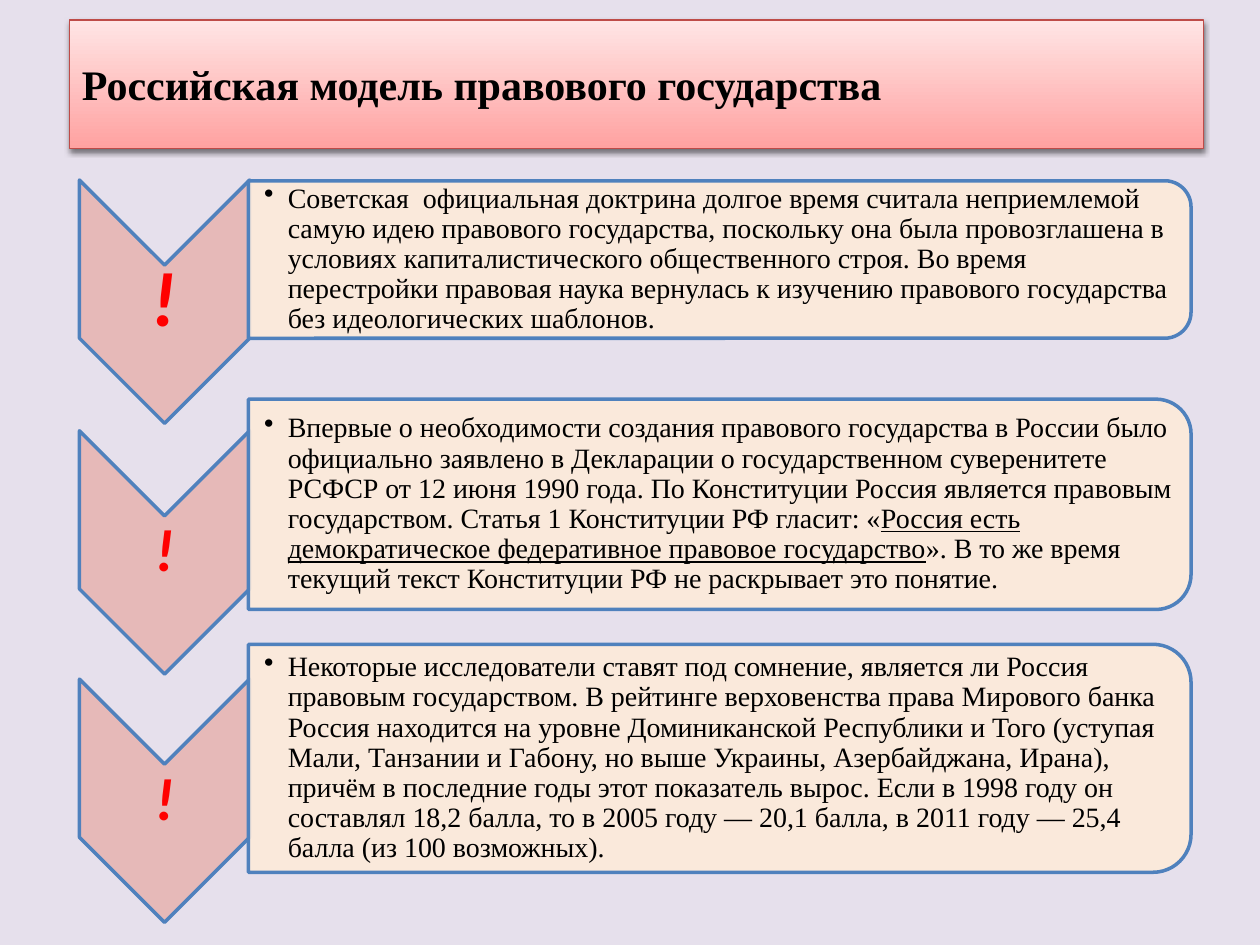
from lxml import etree
from pptx import Presentation
from pptx.dml.color import RGBColor
from pptx.enum.shapes import MSO_SHAPE
from pptx.enum.text import MSO_ANCHOR, MSO_AUTO_SIZE, PP_ALIGN
from pptx.oxml.ns import qn
from pptx.util import Pt

CHEVRON = MSO_SHAPE.CHEVRON
ROUNDED_PANEL = MSO_SHAPE.ROUND_2_SAME_RECTANGLE
MIDDLE = MSO_ANCHOR.MIDDLE
NO_AUTOFIT = MSO_AUTO_SIZE.NONE
LEFT = PP_ALIGN.LEFT
CENTER = PP_ALIGN.CENTER

LAVENDER = RGBColor(0xE6, 0xE0, 0xEC)
ROSE = RGBColor(0xE6, 0xB9, 0xB8)
CREAM = RGBColor(0xFD, 0xEA, 0xDA)
BLUE = RGBColor(0x4F, 0x81, 0xBD)
RED = RGBColor(0xFF, 0x00, 0x00)
BLACK = RGBColor(0x00, 0x00, 0x00)
TITLE_TOP = RGBColor(0xFF, 0xE5, 0xE5)
TITLE_BOTTOM = RGBColor(0xFF, 0xA2, 0xA1)
TITLE_LINE = RGBColor(0xBE, 0x4B, 0x48)

CHEVRON_CENTER = 94
CHEVRON_LENGTH = 139
CHEVRON_WIDTH = 97.2
MARK_HEIGHT = 42
PANEL_LEFT = 142
PANEL_WIDTH = 538.6
TEXT_WIDTH = 534
TEXT_SHARE = 0.9

TITLE = "Российская модель правового государства"
ROWS = [
    (172.4, 44, 148.3, 90, [
        ("Советская  официальная доктрина долгое время считала неприемлемой самую идею "
         "правового государства, поскольку она была провозглашена в условиях "
         "капиталистического общественного строя. Во время перестройки правовая наука "
         "вернулась к изучению правового государства без идеологических шаблонов.", False),
    ]),
    (315.7, 34, 288.2, 120.2, [
        ("Впервые о необходимости создания правового государства в России было официально "
         "заявлено в Декларации о государственном суверенитете РСФСР от 12 июня 1990 года. "
         "По Конституции Россия является правовым государством. Статья 1 Конституции РФ "
         "гласит: «", False),
        ("Россия есть демократическое федеративное правовое государство", True),
        ("». В то же время текущий текст Конституции РФ не раскрывает это понятие.", False),
    ]),
    (457.6, 34, 433.3, 130.3, [
        ("Некоторые исследователи ставят под сомнение, является ли Россия правовым "
         "государством. В рейтинге верховенства права Мирового банка Россия находится на "
         "уровне Доминиканской Республики и Того (уступая Мали, Танзании и Габону, но выше "
         "Украины, Азербайджана, Ирана), причём в последние годы этот показатель вырос. "
         "Если в 1998 году он составлял 18,2 балла, то в 2005 году — 20,1 балла, "
         "в 2011 году — 25,4 балла (из 100 возможных).", False),
    ]),
]


class SlideBuilder:
    title_font = {"name": "Times New Roman", "size": Pt(24), "bold": True}
    mark_font = {"name": "Calibri", "bold": True, "italic": True}
    body_font = {"name": "Times New Roman", "size": Pt(16)}

    def __init__(self, presentation):
        self.slide = presentation.slides.add_slide(presentation.slide_layouts[5])
        fill = self.slide.background.fill
        fill.solid()
        fill.fore_color.rgb = LAVENDER

    def apply(self, target, values):
        for name, value in values.items():
            setattr(target, name, value)

    def add_text(self, paragraph, text, color, values):
        run = paragraph.add_run()
        run.text = text
        self.apply(run.font, values)
        run.font.color.rgb = color

    def title(self, text, left, top, width, height):
        shape = self.slide.shapes.title
        self.apply(shape, {"left": Pt(left), "top": Pt(top),
                           "width": Pt(width), "height": Pt(height)})
        shape.fill.gradient()
        shape.fill.gradient_angle = 270
        for stop, color in zip(shape.fill.gradient_stops, (TITLE_TOP, TITLE_BOTTOM)):
            stop.color.rgb = color
        shape.line.color.rgb = TITLE_LINE
        shape.line.width = Pt(0.75)
        effects = etree.SubElement(shape.element.spPr, qn("a:effectLst"))
        shadow = etree.SubElement(effects, qn("a:outerShdw"), blurRad="40000",
                                  dist="23000", dir="5400000", rotWithShape="0")
        shade = etree.SubElement(shadow, qn("a:srgbClr"), val="000000")
        etree.SubElement(shade, qn("a:alpha"), val="50000")
        self.apply(shape.text_frame, {"vertical_anchor": MIDDLE, "word_wrap": True,
                                      "auto_size": NO_AUTOFIT})
        paragraph = shape.text_frame.paragraphs[0]
        paragraph.alignment = LEFT
        self.add_text(paragraph, text, BLACK, self.title_font)

    def turned_shape(self, kind, center_x, center_y, width, height, color, opacity=None):
        shape = self.slide.shapes.add_shape(kind, Pt(center_x - width / 2),
                                            Pt(center_y - height / 2),
                                            Pt(width), Pt(height))
        shape.rotation = 90
        shape.shadow.inherit = False
        shape.fill.solid()
        shape.fill.fore_color.rgb = color
        shape.line.color.rgb = BLUE
        shape.line.width = Pt(2)
        if opacity:
            solid = shape.element.spPr.find(qn("a:solidFill"))
            etree.SubElement(solid[0], qn("a:alpha"), val=str(opacity * 1000))

    def text_box(self, left, center_y, width, height, margin_left, margin):
        box = self.slide.shapes.add_textbox(Pt(left), Pt(center_y - height / 2),
                                            Pt(width), Pt(height))
        self.apply(box.text_frame, {
            "word_wrap": True, "vertical_anchor": MIDDLE, "auto_size": NO_AUTOFIT,
            "margin_left": Pt(margin_left), "margin_right": Pt(margin),
            "margin_top": Pt(margin), "margin_bottom": Pt(margin)})
        paragraph = box.text_frame.paragraphs[0]
        paragraph.line_spacing = 0.9
        return paragraph

    def mark(self, center_y, size):
        paragraph = self.text_box(CHEVRON_CENTER - CHEVRON_WIDTH / 2, center_y,
                                  CHEVRON_WIDTH, MARK_HEIGHT, 2, 2)
        paragraph.alignment = CENTER
        self.add_text(paragraph, "!", RED, {**self.mark_font, "size": Pt(size)})

    def bullet(self, center_y, height, runs):
        paragraph = self.text_box(PANEL_LEFT, center_y, TEXT_WIDTH, height, 9, 0.8)
        paragraph.level = 1
        properties = paragraph._p.get_or_add_pPr()
        properties.set("marL", str(Pt(13.5)))
        properties.set("indent", str(Pt(-13.5)))
        etree.SubElement(properties, qn("a:buChar"), char="•")
        for text, underlined in runs:
            self.add_text(paragraph, text, BLACK,
                          {**self.body_font, "underline": underlined})

    def row(self, chevron_y, mark_size, panel_y, panel_height, runs):
        self.turned_shape(CHEVRON, CHEVRON_CENTER, chevron_y,
                          CHEVRON_LENGTH, CHEVRON_WIDTH, ROSE)
        self.mark(chevron_y, mark_size)
        self.turned_shape(ROUNDED_PANEL, PANEL_LEFT + PANEL_WIDTH / 2, panel_y,
                          panel_height, PANEL_WIDTH, CREAM, 90)
        self.bullet(panel_y, panel_height * TEXT_SHARE, runs)


def main():
    presentation = Presentation()
    presentation.slide_width = Pt(720)
    presentation.slide_height = Pt(540)
    builder = SlideBuilder(presentation)
    builder.title(TITLE, 39.6, 11.4, 648, 73.4)
    for row in ROWS:
        builder.row(*row)
    presentation.save("out.pptx")


if __name__ == "__main__":
    main()
